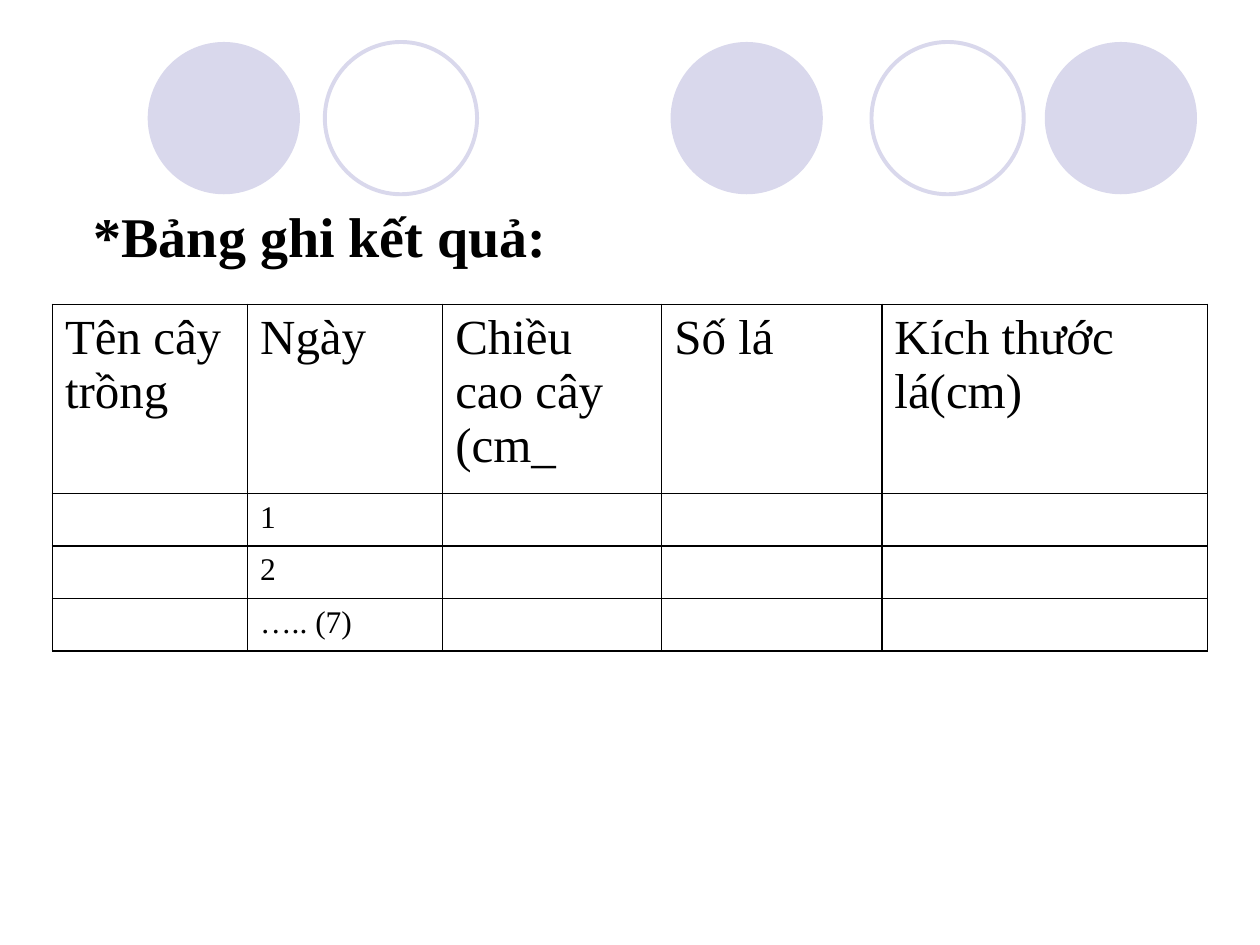
from dataclasses import dataclass

from lxml import etree
from pptx import Presentation
from pptx.dml.color import RGBColor
from pptx.enum import shapes as kinds, text as txt
from pptx.oxml.ns import qn
from pptx.util import Pt


@dataclass(frozen=True)
class Theme:
    font: str = "Times New Roman"
    ink: str = "000000"
    disc: str = "D9D8EC"
    title: float = 32
    head: float = 28
    body: float = 18
    ring: float = 2.25
    rule: float = 1


@dataclass(frozen=True)
class Disc:
    left: float
    solid: bool
    top: float = 24
    size: float = 87


THEME = Theme()
DISCS = [
    Disc(383.2, True),
    Disc(597, True),
    Disc(84.4, True),
    Disc(498, False),
    Disc(185.6, False),
]
COLS = [111.5, 111.5, 125.2, 125.8, 186]
ROWS = [108, 30, 30, 30]
HEADS = ["Tên cây trồng", "Ngày", "Chiều cao cây (cm_", "Số lá", "Kích thước lá(cm)"]
DAYS = ["1", "2", "….. (7)"]


def draw_disc(slide, disc: Disc) -> None:
    oval = slide.shapes.add_shape(
        kinds.MSO_SHAPE.OVAL, Pt(disc.left), Pt(disc.top), Pt(disc.size), Pt(disc.size)
    )
    oval.shadow.inherit = False
    color = RGBColor.from_string(THEME.disc)
    if disc.solid:
        oval.fill.solid()
        oval.fill.fore_color.rgb = color
        oval.line.fill.background()
    else:
        oval.fill.background()
        oval.line.color.rgb = color
        oval.line.width = Pt(THEME.ring)


def style(font, size: float, bold: bool = False) -> None:
    for key, value in {"name": THEME.font, "size": Pt(size), "bold": bold}.items():
        setattr(font, key, value)
    font.color.rgb = RGBColor.from_string(THEME.ink)


def draw_title(slide, words: str) -> None:
    box = slide.shapes.add_textbox(Pt(0), Pt(108), Pt(360), Pt(66))
    frame = box.text_frame
    inset = Pt(7.2)
    look = {
        "word_wrap": True,
        "vertical_anchor": txt.MSO_ANCHOR.TOP,
        "margin_left": inset,
        "margin_right": inset,
        "margin_top": inset,
        "margin_bottom": inset,
    }
    for key, value in look.items():
        setattr(frame, key, value)
    para = frame.paragraphs[0]
    para.alignment = txt.PP_ALIGN.CENTER
    para.space_before = Pt(6)
    props = para._p.get_or_add_pPr()
    props.set("marL", str(Pt(6)))
    props.set("indent", "0")
    run = para.add_run()
    run.text = words
    style(run.font, THEME.title, True)


def rule_cell(cell) -> None:
    """Draw the four borders; they precede the fill in the cell's XML."""
    props = cell._tc.get_or_add_tcPr()
    for at, side in enumerate(("lnL", "lnR", "lnT", "lnB")):
        line = etree.Element(qn(f"a:{side}"), w=str(Pt(THEME.rule)))
        fill = etree.SubElement(line, qn("a:solidFill"))
        etree.SubElement(fill, qn("a:srgbClr"), val=THEME.ink)
        props.insert(at, line)


def draw_table(slide, grid: list[list[str]]) -> None:
    table = slide.shapes.add_table(
        len(ROWS), len(COLS), Pt(30), Pt(174), Pt(sum(COLS)), Pt(sum(ROWS))
    ).table
    table.first_row = table.horz_banding = False
    for col, width in zip(table.columns, COLS):
        col.width = Pt(width)
    for at, (row, height) in enumerate(zip(table.rows, ROWS)):
        row.height = Pt(height)
        for cell, words in zip(row.cells, grid[at]):
            cell.fill.background()
            rule_cell(cell)
            para = cell.text_frame.paragraphs[0]
            size = THEME.body if at else THEME.head
            if words:
                run = para.add_run()
                run.text = words
                style(run.font, size)
            else:
                style(para.font, size)


def main() -> None:
    deck = Presentation()
    deck.slide_width, deck.slide_height = Pt(720), Pt(540)
    slide = deck.slides.add_slide(deck.slide_layouts[6])
    for disc in DISCS:
        draw_disc(slide, disc)
    draw_title(slide, "*Bảng ghi kết quả:")
    draw_table(slide, [HEADS] + [["", day, "", "", ""] for day in DAYS])
    deck.save("out.pptx")


if __name__ == "__main__":
    main()
